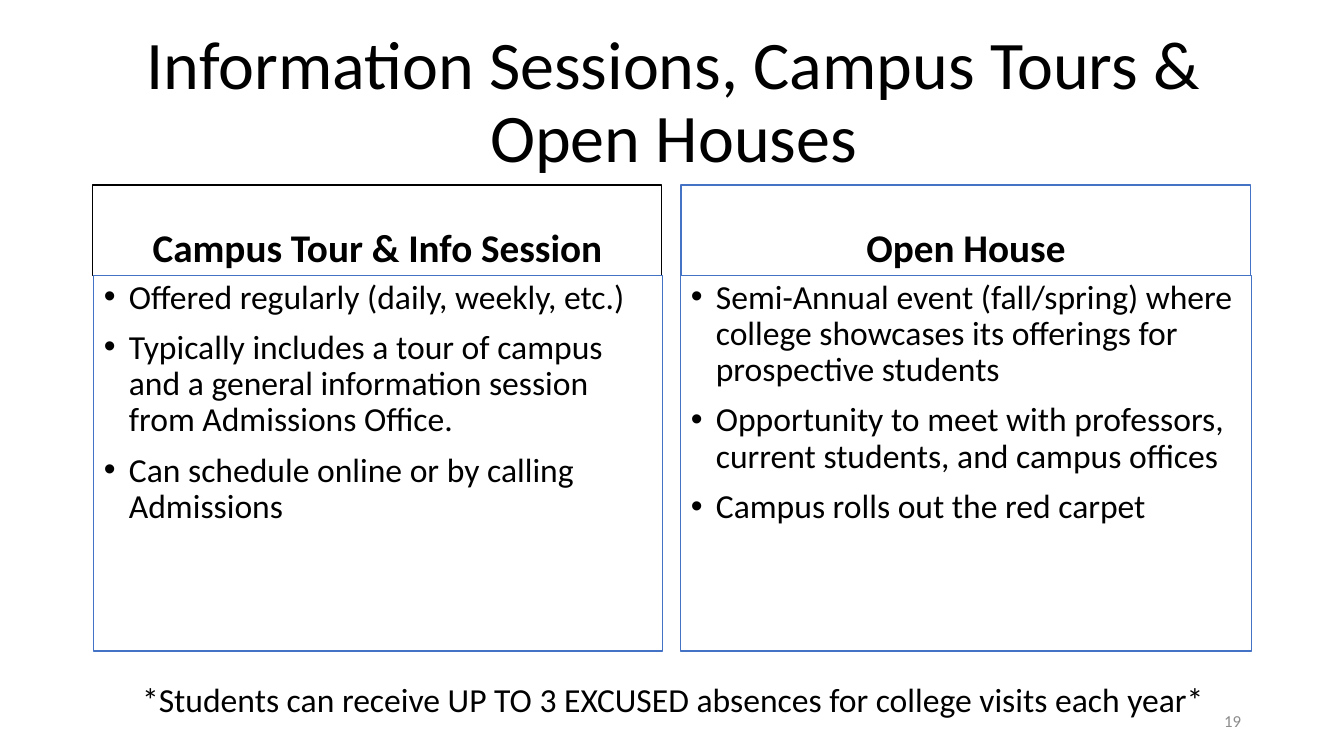
from lxml import etree
from pptx import Presentation
from pptx.dml.color import RGBColor
from pptx.enum.shapes import MSO_SHAPE
from pptx.enum.text import MSO_ANCHOR, PP_ALIGN
from pptx.oxml.ns import qn
from pptx.util import Pt

RECT = MSO_SHAPE.RECTANGLE
TOP, MIDDLE, BOTTOM = MSO_ANCHOR.TOP, MSO_ANCHOR.MIDDLE, MSO_ANCHOR.BOTTOM
LEFT, CENTER, RIGHT = PP_ALIGN.LEFT, PP_ALIGN.CENTER, PP_ALIGN.RIGHT

FONT = "Calibri"
COLORS = {"text": "000000", "blue": "4472C4", "number": "8C8C8C"}

TITLE = "Information Sessions, Campus Tours & Open Houses"
NOTE = "*Students can receive UP TO 3 EXCUSED absences for college visits each year*"
NUMBER = "19"
# heading, heading line colour, heading left and width, list left and width, points
COLUMNS = [
    ("Campus Tour & Info Session", "text", (93, 569), (94, 569), [
        "Offered regularly (daily, weekly, etc.)",
        "Typically includes a tour of campus and a general information session "
        "from Admissions Office.",
        "Can schedule online or by calling Admissions",
    ]),
    ("Open House", "blue", (681, 570), (681, 571), [
        "Semi-Annual event (fall/spring) where college showcases its offerings "
        "for prospective students",
        "Opportunity to meet with professors, current students, and campus offices",
        "Campus rolls out the red carpet",
    ]),
]
HEAD_TOP, HEAD_HIGH = 185, 91
LIST_TOP, LIST_HIGH = 275, 376
INDENT = 25

SCALE = 914400 / 100.8


def emu(px):
    return round(px * SCALE)


def rgb(name):
    return RGBColor.from_string(COLORS[name])


def write(shape, lines, size, color="text", align=CENTER, anchor=TOP,
          bold=False, spacing=None, before=0):
    frame = shape.text_frame
    frame.word_wrap = True
    frame.vertical_anchor = anchor
    frame.text = "\n".join(lines)
    for para in frame.paragraphs:
        para.alignment = align
        para.space_before = Pt(before)
        if spacing:
            para.line_spacing = spacing
        font = para.runs[0].font
        font.name, font.size, font.bold = FONT, Pt(size), bold
        font.color.rgb = rgb(color)


def add_label(box, text, size, **style):
    label = slide.shapes.add_textbox(*map(emu, box))
    write(label, [text], size, **style)


def add_panel(box, line, lines, size, **style):
    panel = slide.shapes.add_shape(RECT, *map(emu, box))
    panel.shadow.inherit = False
    panel.fill.background()
    panel.line.color.rgb = rgb(line)
    panel.line.width = Pt(0.75)
    write(panel, lines, size, spacing=0.9, before=10, **style)
    return panel


def add_bullets(shape):
    for para in shape.text_frame.paragraphs:
        props = para._p.get_or_add_pPr()
        props.set("marL", str(emu(INDENT)))
        props.set("indent", str(-emu(INDENT)))
        etree.SubElement(props, qn("a:buFont"), typeface="Arial")
        etree.SubElement(props, qn("a:buChar"), char="•")


deck = Presentation()
deck.slide_width, deck.slide_height = emu(1344), emu(756)
slide = deck.slides.add_slide(deck.slide_layouts[6])

add_label((94, 31, 1159, 146), TITLE, 48.6, anchor=MIDDLE, spacing=0.9)
for head, line, (head_x, head_w), (list_x, list_w), points in COLUMNS:
    add_panel((head_x, HEAD_TOP, head_w, HEAD_HIGH), line, [head], 28,
              anchor=BOTTOM, bold=True)
    panel = add_panel((list_x, LIST_TOP, list_w, LIST_HIGH), "blue", points, 24,
                      align=LEFT)
    add_bullets(panel)
add_label((44, 674, 1258, 50), NOTE, 24)
add_label((949, 701, 302, 40), NUMBER, 12, color="number", align=RIGHT, anchor=MIDDLE)

deck.save("out.pptx")
